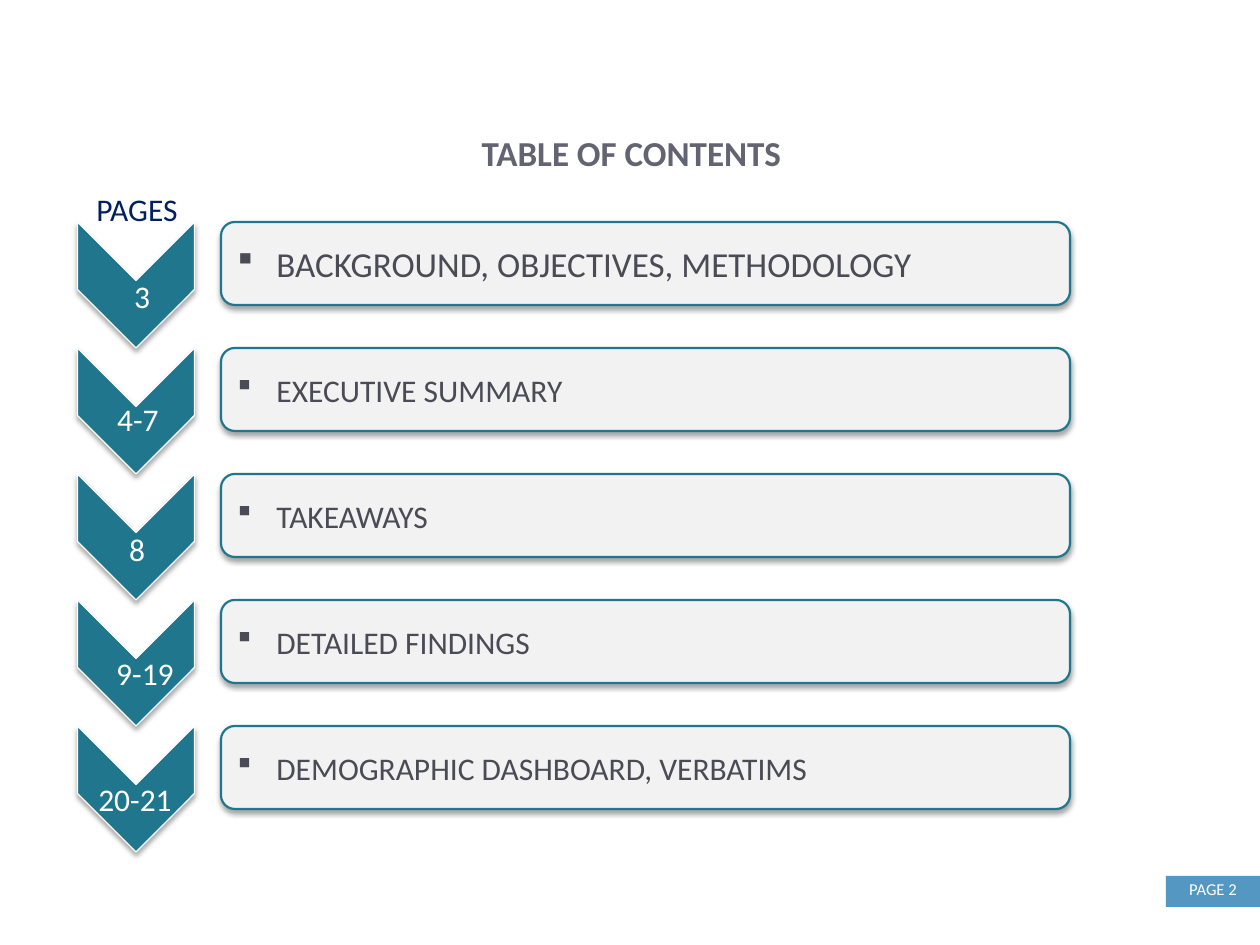
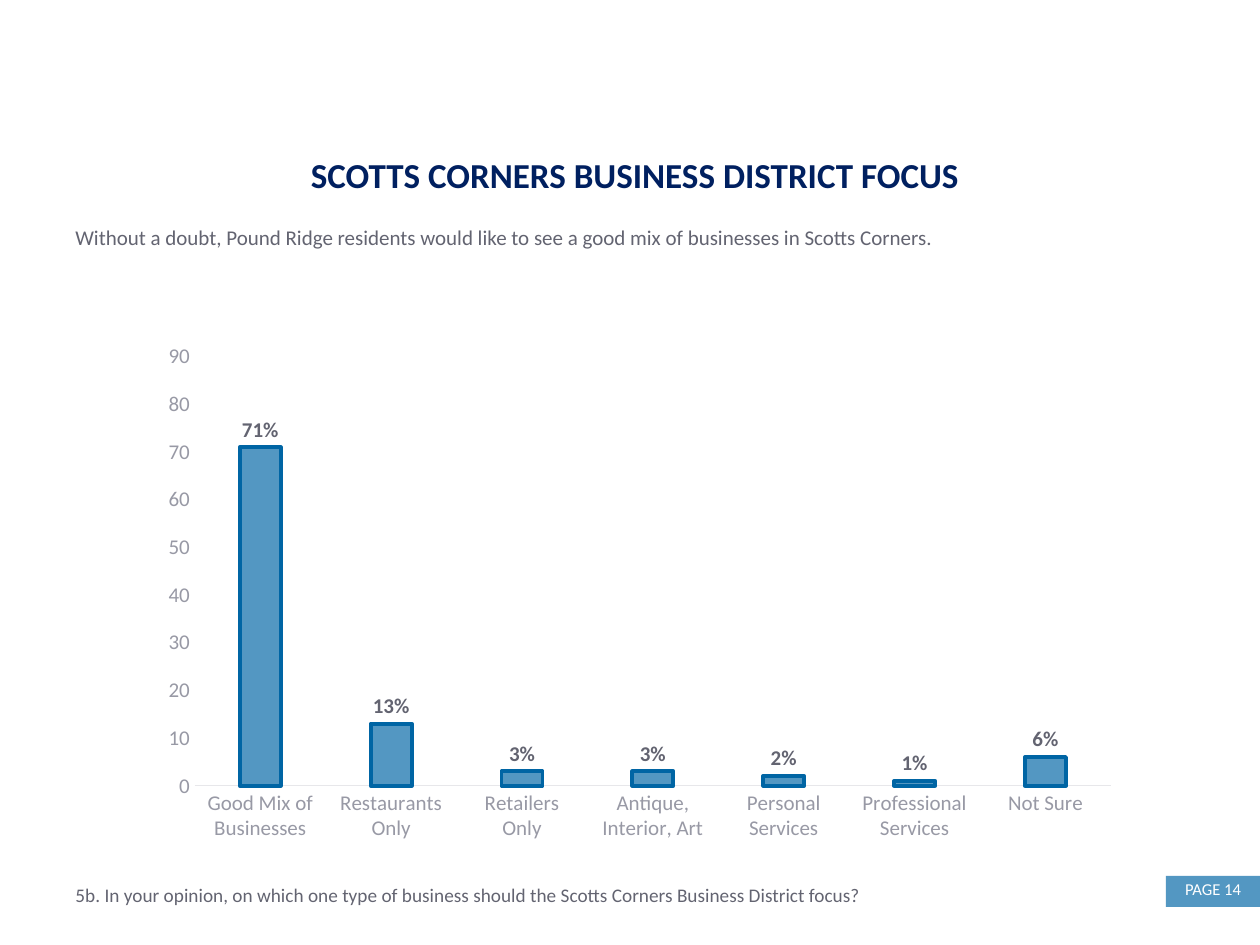
from lxml import etree
from pptx import Presentation
from pptx.chart.data import CategoryChartData
from pptx.dml.color import RGBColor
from pptx.enum.chart import XL_CHART_TYPE, XL_LABEL_POSITION, XL_TICK_MARK
from pptx.enum.shapes import MSO_SHAPE
from pptx.enum.text import MSO_ANCHOR, PP_ALIGN
from pptx.oxml import parse_xml
from pptx.oxml.ns import nsdecls, qn
from pptx.util import Pt

COLUMN = XL_CHART_TYPE.COLUMN_CLUSTERED
OUTSIDE_END = XL_LABEL_POSITION.OUTSIDE_END
NO_TICK = XL_TICK_MARK.NONE
RECTANGLE, ROUNDED, CHEVRON = MSO_SHAPE.RECTANGLE, MSO_SHAPE.ROUNDED_RECTANGLE, MSO_SHAPE.CHEVRON
TOP, MIDDLE = MSO_ANCHOR.TOP, MSO_ANCHOR.MIDDLE
LEFT, CENTER, JUSTIFY = PP_ALIGN.LEFT, PP_ALIGN.CENTER, PP_ALIGN.JUSTIFY

FONT = "Calibri"
SQUARE_BULLET = ("Wingdings", "§")  # Wingdings draws this character as a small square
EMU_PER_PX = 914400 / 126
COLORS = {
    "white": "FFFFFF", "tab": "5397C2", "teal": "20768C", "panel": "F2F2F2",
    "entry": "4A4B55", "body": "636471", "navy": "002060", "axis": "9899A5",
    "axis_line": "E7E7EA", "bar_line": "0065A4",
}

# Entry, text size, pages, then centre x and top of the pages label
CONTENTS = [
    ("BACKGROUND, OBJECTIVES, METHODOLOGY", 20, "3", 142, 271),
    ("EXECUTIVE SUMMARY", 18, "4-7", 138, 394),
    ("TAKEAWAYS", 18, "8", 137, 524),
    ("DETAILED FINDINGS", 18, "9-19", 145, 648),
    ("DEMOGRAPHIC DASHBOARD, VERBATIMS", 18, "20-21", 135, 774),
]
ROW_TOP, ROW_PITCH = 222, 126
CHEVRON_LENGTH, CHEVRON_WIDTH, CHEVRON_CENTER = 126, 117, 136

FINDING = ("Without a doubt, Pound Ridge residents would like to see a good mix "
           "of businesses in Scotts Corners.")
QUESTION = ("5b. In your opinion, on which one type of business should the "
            "Scotts Corners Business District focus?")
BUSINESS_FOCUS = {
    "Good Mix of Businesses": 71,
    "Restaurants Only": 13,
    "Retailers\nOnly": 3,
    "Antique, Interior, Art": 3,
    "Personal Services": 2,
    "Professional Services": 1,
    "Not Sure": 6,
}
PLOT_AREA = {"x": 0.063, "y": 0.025, "w": 0.918, "h": 0.843}


def px(length):
    return round(length * EMU_PER_PX)


def color(name):
    return RGBColor.from_string(COLORS[name])


def style_font(font, size, color_name, bold=False):
    font.name, font.size, font.bold = FONT, Pt(size), bold
    font.color.rgb = color(color_name)


def write(shape, text, size=18, color_name="body", bold=False, align=LEFT,
          anchor=TOP, wrap=True, bullet=None):
    frame = shape.text_frame
    frame.word_wrap = wrap
    frame.vertical_anchor = anchor
    paragraph = frame.paragraphs[0]
    paragraph.text = text
    paragraph.alignment = align
    if bullet:
        bullet_font, character = bullet
        properties = paragraph._p.get_or_add_pPr()
        properties.set("marL", str(px(39)))
        properties.set("indent", str(-px(39)))
        etree.SubElement(properties, qn("a:buFont")).set("typeface", bullet_font)
        etree.SubElement(properties, qn("a:buChar")).set("char", character)
    style_font(paragraph.runs[0].font, size, color_name, bold)


def add_text(slide, text, box, **text_format):
    write(slide.shapes.add_textbox(*map(px, box)), text, **text_format)


def add_box(slide, preset, box, fill, line=None, line_width=1, shadow=False):
    shape = slide.shapes.add_shape(preset, *map(px, box))
    shape.fill.solid()
    shape.fill.fore_color.rgb = color(fill)
    if line:
        shape.line.color.rgb = color(line)
        shape.line.width = Pt(line_width)
    else:
        shape.line.fill.background()
    shape.shadow.inherit = False
    if shadow:
        effects = shape._element.spPr.find(qn("a:effectLst"))
        effects.append(parse_xml(
            f'<a:outerShdw {nsdecls("a")} blurRad="39370" dist="22860" dir="5400000" '
            'rotWithShape="0"><a:srgbClr val="000000"><a:alpha val="35000"/>'
            '</a:srgbClr></a:outerShdw>'))
    return shape


def add_page(presentation, number, title, title_box, title_color):
    """Add a blank slide with its title and page tab."""
    slide = presentation.slides.add_slide(presentation.slide_layouts[6])
    add_box(slide, RECTANGLE, (1166, 876, 94, 31), "tab")
    add_text(slide, f"PAGE {number}", (1166, 864, 94, 50), size=9.5,
             color_name="white", align=CENTER, anchor=MIDDLE)
    add_text(slide, title, title_box, size=20, color_name=title_color,
             bold=True, align=CENTER)
    return slide


def add_contents_row(slide, index, entry, size, pages, label_center, label_top):
    top = ROW_TOP + index * ROW_PITCH
    chevron_box = (CHEVRON_CENTER - CHEVRON_LENGTH / 2,
                   top + (CHEVRON_LENGTH - CHEVRON_WIDTH) / 2,
                   CHEVRON_LENGTH, CHEVRON_WIDTH)
    chevron = add_box(slide, CHEVRON, chevron_box, "teal", "white", 0.75, shadow=True)
    chevron.rotation = 90
    panel = add_box(slide, ROUNDED, (221, top, 849, 83), "panel", "teal", 1.25, shadow=True)
    write(panel, entry, size=size, color_name="entry", anchor=MIDDLE, bullet=SQUARE_BULLET)
    label_width = 30 + 15 * len(pages)
    add_text(slide, pages, (label_center - label_width / 2, label_top, label_width, 50),
             color_name="white", align=CENTER, wrap=False)


def set_plot_area(chart):
    plot_area = chart._chartSpace.chart.plotArea
    for layout in plot_area.findall(qn("c:layout")):
        plot_area.remove(layout)
    sizes = "".join(f'<c:{key} val="{value}"/>' for key, value in PLOT_AREA.items())
    plot_area.insert(0, parse_xml(
        f'<c:layout {nsdecls("c")}><c:manualLayout><c:layoutTarget val="inner"/>'
        f'<c:xMode val="edge"/><c:yMode val="edge"/>{sizes}</c:manualLayout></c:layout>'))


def add_focus_chart(slide):
    data = CategoryChartData()
    data.categories = list(BUSINESS_FOCUS)
    data.add_series("Series 1", list(BUSINESS_FOCUS.values()))
    box = map(px, (132, 344, 998, 509))
    chart = slide.shapes.add_chart(COLUMN, *box, data).chart
    chart.has_title = chart.has_legend = False
    style_font(chart.font, 10, "body")
    set_plot_area(chart)

    for axis in (chart.category_axis, chart.value_axis):
        axis.major_tick_mark = axis.minor_tick_mark = NO_TICK
        axis.has_major_gridlines = False
        style_font(axis.tick_labels.font, 12, "axis")
    chart.category_axis.format.line.color.rgb = color("axis_line")
    chart.category_axis.format.line.width = Pt(0.75)
    chart.value_axis.format.line.fill.background()
    chart.value_axis.minimum_scale = 0
    chart.value_axis.maximum_scale = 90
    chart.value_axis.major_unit = 10

    plot = chart.plots[0]
    plot.vary_by_categories = False
    plot.gap_width, plot.overlap = 219, -27
    series = plot.series[0]
    series.format.fill.solid()
    series.format.fill.fore_color.rgb = color("tab")
    series.format.line.color.rgb = color("bar_line")
    series.format.line.width = Pt(2.25)
    labels = series.data_labels
    labels.show_value = True
    labels.position = OUTSIDE_END
    labels.number_format = '0"%"'
    labels.number_format_is_linked = False
    style_font(labels.font, 12, "body", bold=True)


def build_contents(presentation):
    slide = add_page(presentation, 2, "TABLE OF CONTENTS", (63, 125, 1137, 55), "body")
    for index, row in enumerate(CONTENTS):
        add_contents_row(slide, index, *row)
    add_text(slide, "PAGES", (79, 184, 116, 50), color_name="navy", align=CENTER)


def build_business_focus(presentation):
    slide = add_page(presentation, 14, "SCOTTS CORNERS BUSINESS DISTRICT FOCUS",
                     (73, 147, 1124, 55), "navy")
    add_text(slide, QUESTION, (63, 877, 815, 37), size=11, wrap=False)
    add_focus_chart(slide)
    add_text(slide, FINDING, (63, 218, 1135, 55), size=12, align=JUSTIFY)


def main():
    presentation = Presentation()
    presentation.slide_width, presentation.slide_height = px(1260), px(945)
    build_contents(presentation)
    build_business_focus(presentation)
    presentation.save("out.pptx")


if __name__ == "__main__":
    main()
